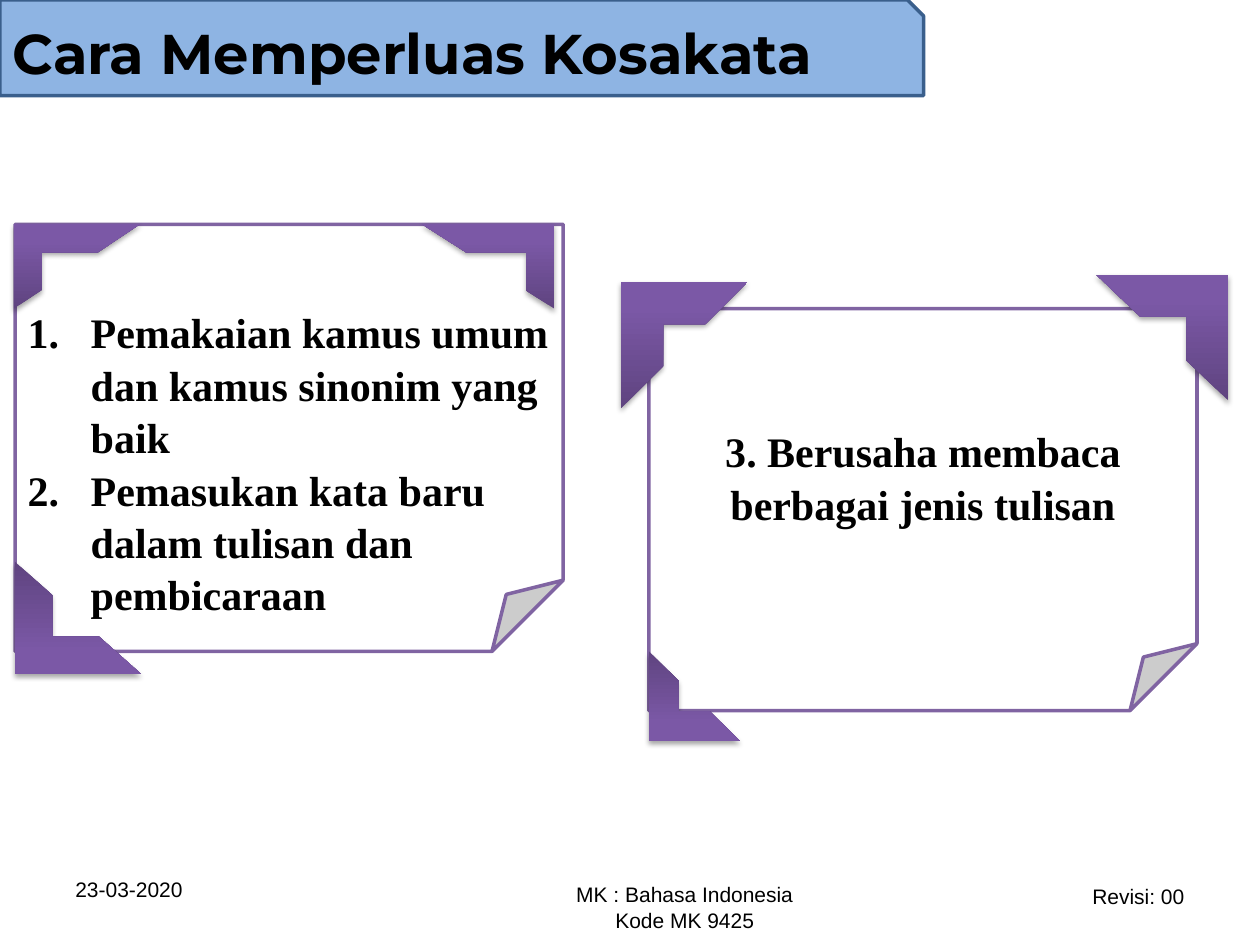
from dataclasses import dataclass
from lxml import etree
from pptx import Presentation
from pptx.dml.color import RGBColor
from pptx.enum.shapes import MSO_SHAPE as SHAPE
from pptx.enum.text import MSO_ANCHOR as ANCHOR, MSO_AUTO_SIZE as AUTO, PP_ALIGN as ALIGN
from pptx.oxml import parse_xml
from pptx.oxml.ns import nsdecls, qn
from pptx.util import Inches, Pt


@dataclass(frozen=True)
class Theme:
    text: str = "000000"
    paper: str = "FFFFFF"
    purple: str = "8064A2"
    banner: str = "8EB4E3"
    banner_line: str = "3A5F8C"
    corner_stops: tuple = ((0, "5F4480"), (80, "7B58A6"), (100, "7C57A8"))
    line_width: int = 2
    title: tuple = ("Montserrat", 32, True)
    card: tuple = ("Times New Roman", 24, True)
    footer: tuple = ("Arial", 12, False)


class SlideBuilder:
    def __init__(self, slide, theme):
        self.s, self.theme = slide, theme

    def set_text(self, sp, lines, style, align=ALIGN.LEFT, spacing=1.0, numbered=False, **frame):
        tf = sp.text_frame
        settings = {"word_wrap": True, "auto_size": AUTO.NONE, **frame}
        for name, value in settings.items():
            setattr(tf, name, value)
        tf.text = "\n".join(lines)
        family, size, bold = style
        font = {"name": family, "size": Pt(size), "bold": bold}
        layout = {"alignment": align, "line_spacing": spacing, "space_before": Pt(0)}
        for p in tf.paragraphs:
            for name, value in layout.items():
                setattr(p, name, value)
            if numbered:
                pPr = p._p.get_or_add_pPr()
                pPr.set("marL", str(Inches(0.5)))
                pPr.set("indent", str(-Inches(0.5)))
                etree.SubElement(pPr, qn("a:buAutoNum"), type="arabicPeriod")
            for r in p.runs:
                for name, value in font.items():
                    setattr(r.font, name, value)
                r.font.color.rgb = RGBColor.from_string(self.theme.text)

    def shape(self, kind, box, fill, line):
        sp = self.s.shapes.add_shape(kind, *map(Inches, box))
        sp.shadow.inherit = False
        sp.fill.solid()
        sp.fill.fore_color.rgb = RGBColor.from_string(fill)
        sp.line.color.rgb = RGBColor.from_string(line)
        sp.line.width = Pt(self.theme.line_width)
        return sp

    def card(self, box):
        return self.shape(SHAPE.FOLDED_CORNER, box, self.theme.paper, self.theme.purple)

    def corner(self, box, flip=None):
        """Add a shaded photo corner; flip is None, "flipH" or "flipV"."""
        sp = self.s.shapes.add_shape(SHAPE.HALF_FRAME, *map(Inches, box))
        sp.line.fill.background()
        spPr = sp._element.spPr
        if flip:
            spPr.find(qn("a:xfrm")).set(flip, "1")
        stops = "".join(f'<a:gs pos="{pos * 1000}"><a:srgbClr val="{color}"/></a:gs>'
                        for pos, color in self.theme.corner_stops)
        spPr.find(qn("a:prstGeom")).addnext(parse_xml(
            f'<a:gradFill {nsdecls("a")} rotWithShape="1"><a:gsLst>{stops}</a:gsLst>'
            '<a:lin ang="16200000" scaled="0"/></a:gradFill>'))
        spPr.append(parse_xml(
            f'<a:effectLst {nsdecls("a")}><a:outerShdw blurRad="{Pt(3.1)}" dist="{Pt(1.8)}" '
            'dir="5400000" rotWithShape="0"><a:srgbClr val="000000">'
            '<a:alpha val="35000"/></a:srgbClr></a:outerShdw></a:effectLst>'))

    def placeholder(self, sp, box, lines, style, **text):
        """Move a template placeholder to box, in front of what is drawn so far."""
        sp.left, sp.top, sp.width, sp.height = map(Inches, box)
        self.s.shapes._spTree.append(sp._element)
        self.set_text(sp, lines, style, **text)

    def footer(self, box, lines, align):
        sp = self.s.shapes.add_textbox(*map(Inches, box))
        self.set_text(sp, lines, self.theme.footer, align)


def main():
    theme = Theme()
    prs = Presentation()
    prs.slide_width, prs.slide_height = Inches(10), Inches(7.5)
    s = prs.slides.add_slide(prs.slide_layouts[1])
    title, body = s.shapes.title, s.placeholders[1]
    b = SlideBuilder(s, theme)

    b.footer((7.17, 6.96, 2.33, 0.3), ["Revisi: 00"], ALIGN.RIGHT)
    b.footer((3.35, 6.95, 4.17, 0.4), ["MK : Bahasa Indonesia", "Kode MK 9425"], ALIGN.CENTER)
    b.footer((0.5, 6.91, 2.33, 0.3), ["23-03-2020"], ALIGN.LEFT)

    b.card((0.12, 1.78, 4.35, 3.39))
    reading = b.card((5.15, 2.45, 4.35, 3.19))
    b.set_text(reading, ["3. Berusaha membaca berbagai jenis tulisan"], theme.card,
               ALIGN.CENTER, spacing=1.04, vertical_anchor=ANCHOR.MIDDLE)

    corners = [
        ((4.93, 2.24, 1, 1), None),
        ((8.7, 2.18, 1.05, 1), "flipH"),
        ((5.15, 5.17, 0.72, 0.71), "flipV"),
        ((0.11, 1.78, 1, 0.67), None),
        ((3.35, 1.78, 1.05, 0.67), "flipH"),
        ((0.12, 4.46, 1, 0.89), "flipV"),
    ]
    for box, flip in corners:
        b.corner(box, flip)

    b.placeholder(body, (0.12, 2.37, 4.35, 2.5),
                  ["Pemakaian kamus umum dan kamus sinonim yang baik",
                   "Pemasukan kata baru dalam tulisan dan pembicaraan"],
                  theme.card, spacing=1.04, numbered=True, vertical_anchor=ANCHOR.TOP)

    banner = (0, 0, 7.33, 0.76)
    b.shape(SHAPE.SNIP_1_RECTANGLE, banner, theme.banner, theme.banner_line)
    b.placeholder(title, (0, 0.06, 7.33, 0.7), ["Cara Memperluas Kosakata"],
                  theme.title, vertical_anchor=ANCHOR.MIDDLE)
    prs.save("out.pptx")


if __name__ == "__main__":
    main()
